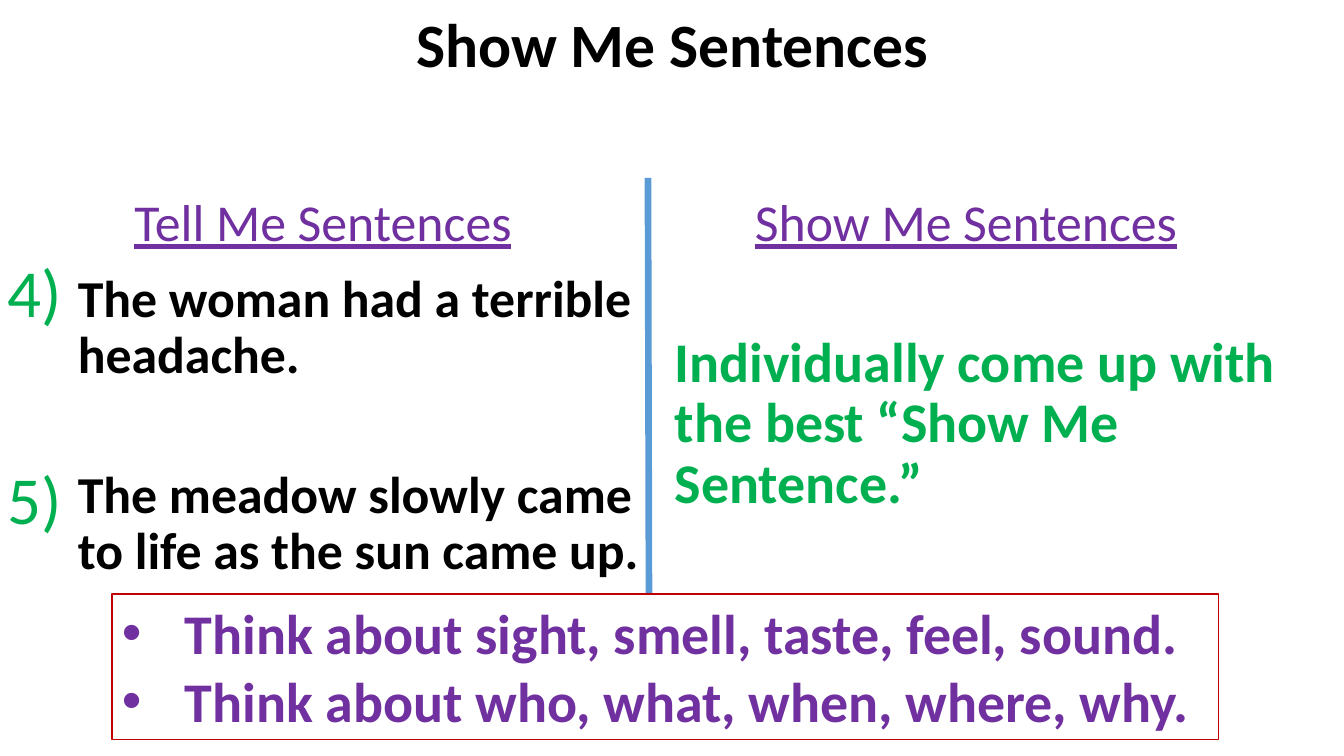
import dataclasses

import pptx
import pptx.dml.color
import pptx.enum.shapes
import pptx.enum.text
import pptx.util
from lxml import etree

EMU_PER_PX = 914400 / 100.8
CENTER = pptx.enum.text.PP_ALIGN.CENTER
LEFT = pptx.enum.text.PP_ALIGN.LEFT


@dataclasses.dataclass(frozen=True)
class Theme:
    font: str = "Calibri"
    black: str = "000000"
    green: str = "00B050"
    purple: str = "7030A0"
    blue: str = "5B9BD5"
    red: str = "C00000"
    title: int = 44
    body: int = 37
    callout: int = 40
    number: int = 48


THEME = Theme()


def px(value):
    return pptx.util.Emu(round(value * EMU_PER_PX))


def color(value):
    return pptx.dml.color.RGBColor.from_string(value)


def write_paragraph(paragraph, text, size, fill, bold=False, underline=False,
                    align=LEFT, spacing=0.9, before=10):
    paragraph.alignment = align
    paragraph.line_spacing = spacing
    paragraph.space_before = pptx.util.Pt(before)
    run = paragraph.add_run()
    run.text = text
    font = run.font
    font.name = THEME.font
    font.size = pptx.util.Pt(size)
    font.bold = bold
    font.underline = underline
    font.color.rgb = color(fill)


def add_text(slide, box, text, size, fill, **style):
    shape = slide.shapes.add_textbox(*map(px, box))
    frame = shape.text_frame
    frame.word_wrap = True
    write_paragraph(frame.paragraphs[0], text, size, fill, **style)
    return frame


def add_divider(slide, start, end):
    line = slide.shapes.add_connector(
        pptx.enum.shapes.MSO_CONNECTOR.STRAIGHT, *map(px, start + end))
    line.line.color.rgb = color(THEME.blue)
    line.line.width = pptx.util.Pt(4.75)
    etree.SubElement(line._element.spPr, pptx.oxml.ns.qn("a:effectLst"))


def add_bullet(paragraph, indent):
    properties = paragraph._p.get_or_add_pPr()
    properties.set("marL", str(px(indent)))
    properties.set("indent", str(-px(indent)))
    font = etree.SubElement(properties, pptx.oxml.ns.qn("a:buFont"))
    font.set("typeface", "Arial")
    bullet = etree.SubElement(properties, pptx.oxml.ns.qn("a:buChar"))
    bullet.set("char", "•")


def add_hint_box(slide, box, hints):
    shape = slide.shapes.add_shape(
        pptx.enum.shapes.MSO_SHAPE.RECTANGLE, *map(px, box))
    shape.shadow.inherit = False
    shape.fill.background()
    shape.line.color.rgb = color(THEME.red)
    shape.line.width = pptx.util.Pt(0.75)
    frame = shape.text_frame
    frame.word_wrap = True
    frame.vertical_anchor = pptx.enum.text.MSO_ANCHOR.TOP
    for index, hint in enumerate(hints):
        paragraph = frame.add_paragraph() if index else frame.paragraphs[0]
        write_paragraph(paragraph, hint, THEME.callout, THEME.purple,
                        bold=True, spacing=1.0, before=0)
        add_bullet(paragraph, 63)


def main():
    presentation = pptx.Presentation()
    presentation.slide_width = px(1344)
    presentation.slide_height = px(756)
    slide = presentation.slides.add_slide(presentation.slide_layouts[6])

    title = add_text(slide, (93, -25, 1159, 146), "Show Me Sentences",
                     THEME.title, THEME.black, bold=True, align=CENTER, before=0)
    title.vertical_anchor = pptx.enum.text.MSO_ANCHOR.MIDDLE

    sentences = add_text(slide, (68, 268, 602, 346),
                         "The woman had a terrible headache.",
                         THEME.body, THEME.black, bold=True)
    write_paragraph(sentences.add_paragraph(),
                    "The meadow slowly came to life as the sun came up.",
                    THEME.body, THEME.black, bold=True, before=60)
    add_text(slide, (665, 329, 657, 485),
             "Individually come up with the best “Show Me Sentence.”",
             THEME.callout, THEME.green, bold=True)
    add_divider(slide, (648, 178), (649, 594))

    for left, heading in ((22, "Tell Me Sentences"), (665, "Show Me Sentences")):
        add_text(slide, (left, 197, 602, 62), heading, THEME.body, THEME.purple,
                 underline=True, align=CENTER, spacing=0.8)
    for top, number in ((255, "4)"), (462, "5)")):
        add_text(slide, (-27, top, 124, 62), number, THEME.number, THEME.green,
                 align=CENTER)

    add_hint_box(slide, (112, 594, 1107, 146),
                 ("Think about sight, smell, taste, feel, sound.",
                  "Think about who, what, when, where, why."))
    presentation.save("out.pptx")


if __name__ == "__main__":
    main()
